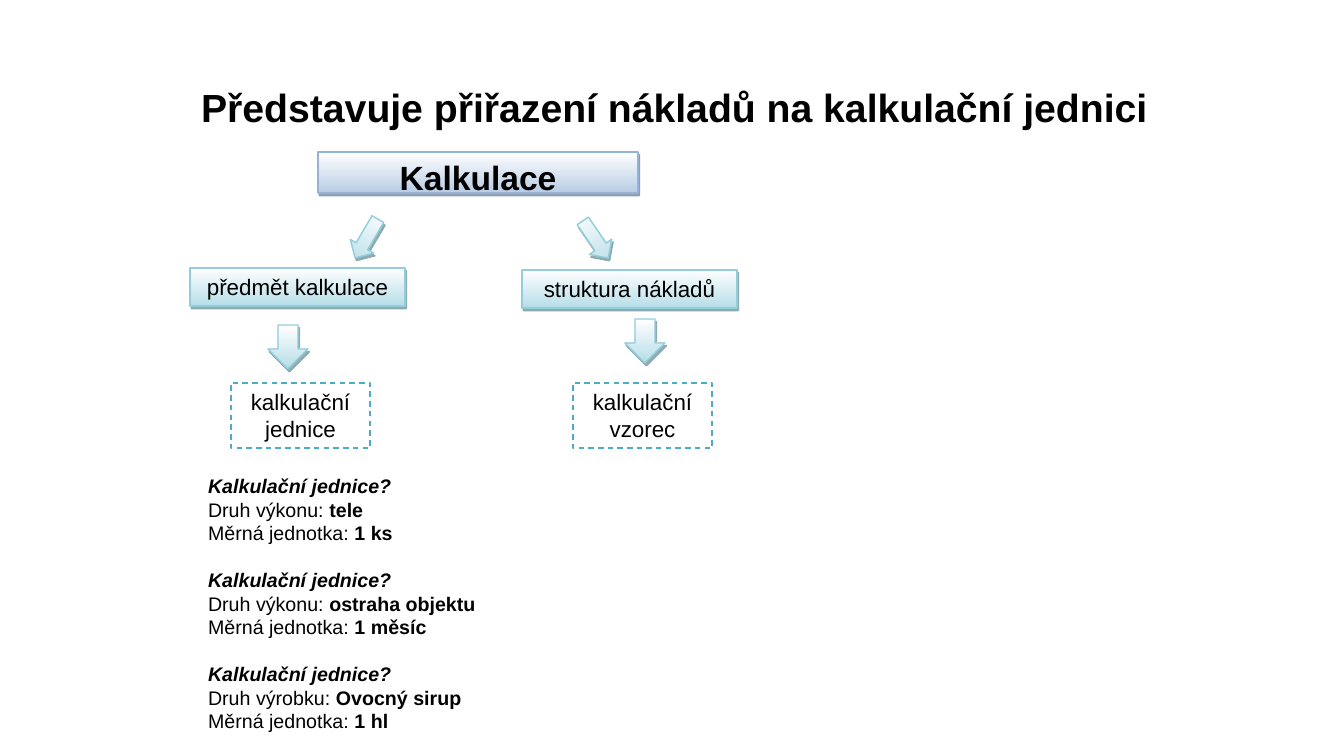
from dataclasses import dataclass

from lxml import etree
from pptx import Presentation
from pptx import util as u
from pptx.dml.color import RGBColor
from pptx.enum import dml, shapes, text
from pptx.oxml import ns

SCALE = 914400 / 100.8


def px(n):
    return u.Emu(round(n * SCALE))


def child(node, tag, **attrs):
    return etree.SubElement(node, ns.qn(tag), attrs)


@dataclass(frozen=True)
class Tone:
    fill: str
    line: str
    shade: str


@dataclass(frozen=True)
class Theme:
    font: str = "Arial"
    ink: str = "000000"
    white: str = "FFFFFF"
    dash: str = "4BACC6"
    blue: Tone = Tone("B8CCE4", "95B3D7", "243F60")
    teal: Tone = Tone("B6DDE8", "92CDDC", "205867")
    title: int = 28
    head: int = 24
    label: int = 16
    body: int = 14
    lead: float = 16.8


class Deck:
    def __init__(self, theme):
        self.theme = theme
        self.show = Presentation()
        self.show.slide_width, self.show.slide_height = px(1344), px(756)
        self.slide = self.show.slides.add_slide(self.show.slide_layouts[1])

    def place(self, shape, box):
        shape.left, shape.top, shape.width, shape.height = map(px, box)
        frame = shape.text_frame
        frame.word_wrap = True
        frame.auto_size = text.MSO_AUTO_SIZE.NONE
        return frame

    def run(self, para, words, size, bold=False, italic=False):
        run = para.add_run()
        run.text = words
        font = run.font
        font.name, font.size = self.theme.font, u.Pt(size)
        font.bold, font.italic = bold, italic
        font.color.rgb = RGBColor.from_string(self.theme.ink)

    def title(self, words, box):
        frame = self.place(self.slide.shapes.title, box)
        frame.vertical_anchor = text.MSO_ANCHOR.MIDDLE
        para = frame.paragraphs[0]
        para.alignment = text.PP_ALIGN.LEFT
        para.line_spacing = 1.5
        self.run(para, words, self.theme.title, bold=True)

    def body(self, groups, box):
        frame = self.place(self.slide.placeholders[1], box)
        frame.vertical_anchor = text.MSO_ANCHOR.TOP
        frame.margin_top = frame.margin_bottom = 0
        size = self.theme.body
        for kind, thing, unit in groups:
            lines = (
                [("Kalkulační jednice?", True, True)],
                [(f"Druh {kind}: ", False, False), (thing, True, False)],
                [("Měrná jednotka: ", False, False), (unit, True, False)],
            )
            for row, line in enumerate(lines):
                para = frame.paragraphs[0]
                first = not para.runs
                if not first:
                    para = frame.add_paragraph()
                props = para._p.get_or_add_pPr()
                props.set("marL", "0")
                props.set("indent", "0")
                child(props, "a:buNone")
                para.alignment = text.PP_ALIGN.JUSTIFY
                para.line_spacing = u.Pt(self.theme.lead)
                gap = self.theme.lead if row == 0 and not first else 0
                para.space_before = u.Pt(gap)
                for words, bold, italic in line:
                    self.run(para, words, size, bold, italic)

    def shape(self, kind, box, line):
        shape = self.slide.shapes.add_shape(kind, *map(px, box))
        shape.shadow.inherit = False
        shape.line.color.rgb = RGBColor.from_string(line)
        shape.line.width = u.Pt(1)
        return shape

    def label(self, shape, box, words, size, bold=False):
        frame = self.place(shape, box)
        frame.vertical_anchor = text.MSO_ANCHOR.TOP
        para = frame.paragraphs[0]
        para.alignment = text.PP_ALIGN.CENTER
        self.run(para, words, size, bold)

    def glow(self, kind, box, tone):
        shape = self.shape(kind, box, tone.line)
        fill = shape.fill
        fill.gradient()
        fill.gradient_angle = 270
        for stop, color, spot in zip(
            fill.gradient_stops, (self.theme.white, tone.fill), (0, 1)
        ):
            stop.color.rgb = RGBColor.from_string(color)
            stop.position = spot
        effect = shape.element.spPr.find(ns.qn("a:effectLst"))
        cast = child(effect, "a:outerShdw", blurRad="0", dist="28000",
                     dir="3780000", algn="ctr", rotWithShape="0")
        shade = child(cast, "a:srgbClr", val=tone.shade)
        child(shade, "a:alpha", val="50000")
        return shape

    def panel(self, words, box, tone, size, bold=False):
        shape = self.glow(shapes.MSO_SHAPE.RECTANGLE, box, tone)
        self.label(shape, box, words, size, bold)

    def arrow(self, box, turn=0):
        shape = self.glow(shapes.MSO_SHAPE.DOWN_ARROW, box, self.theme.teal)
        shape.rotation = turn

    def dashed(self, words, box):
        shape = self.shape(shapes.MSO_SHAPE.RECTANGLE, box, self.theme.dash)
        shape.fill.solid()
        shape.fill.fore_color.rgb = RGBColor.from_string(self.theme.white)
        shape.line.dash_style = dml.MSO_LINE.DASH
        self.label(shape, box, words, self.theme.label)


def main():
    theme = Theme()
    deck = Deck(theme)
    deck.body(
        (
            ("výkonu", "tele", "1 ks"),
            ("výkonu", "ostraha objektu", "1 měsíc"),
            ("výrobku", "Ovocný sirup", "1 hl"),
        ),
        (198, 474, 602, 282),
    )
    for words, left, arrow in (
        ("kalkulační jednice", 231, (268, 325, 40, 44)),
        ("kalkulační vzorec", 573, (625, 319, 40, 44)),
    ):
        deck.dashed(words, (left, 383, 139, 65))
        deck.arrow(arrow)
    deck.panel("Kalkulace", (318, 152, 320, 41), theme.blue, theme.head, True)
    for words, left, top, arrow, turn in (
        ("předmět kalkulace", 190, 268, (353, 216, 27, 45), 30.5),
        ("struktura nákladů", 522, 270, (582, 217, 27, 45), 325.6),
    ):
        deck.panel(words, (left, top, 215, 38), theme.teal, theme.label)
        deck.arrow(arrow, turn)
    deck.title("Představuje přiřazení nákladů na kalkulační jednici",
               (191, 73, 1086, 45))
    deck.show.save("out.pptx")


if __name__ == "__main__":
    main()
